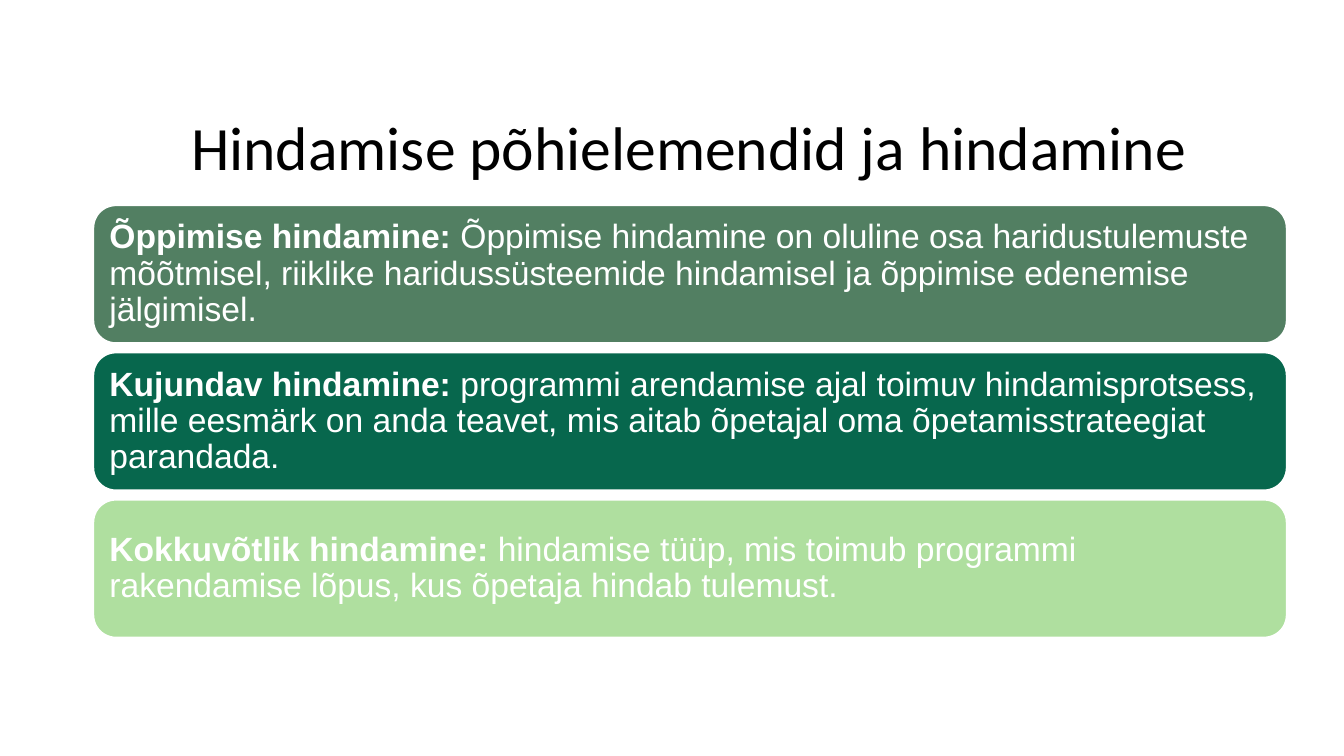
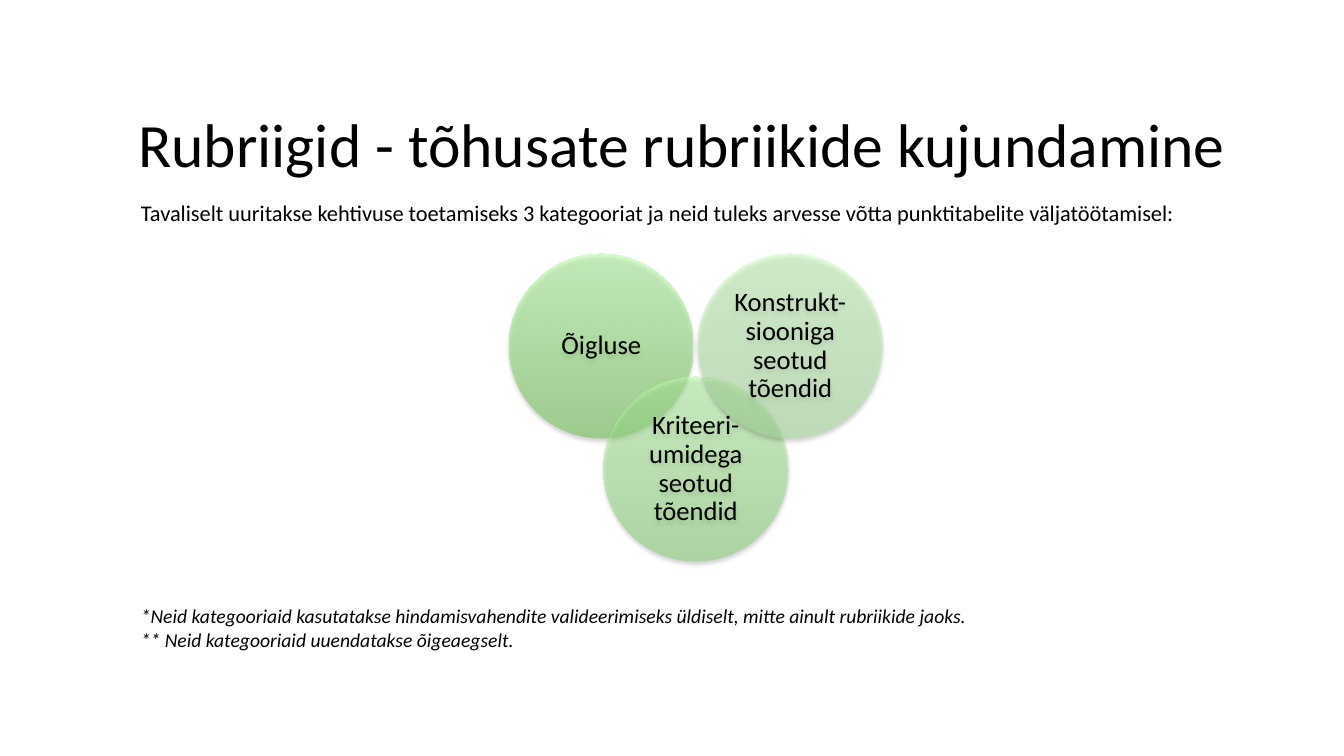
import dataclasses
import typing

import pptx
import pptx.dml.color
import pptx.enum.shapes
import pptx.enum.text
import pptx.oxml
import pptx.oxml.ns
import pptx.oxml.xmlchemy
import pptx.util

Cm = pptx.util.Cm
Shape = pptx.enum.shapes.MSO_SHAPE
Align = pptx.enum.text.PP_ALIGN
Anchor = pptx.enum.text.MSO_ANCHOR
qn = pptx.oxml.ns.qn

BLACK = "000000"
WHITE = "FFFFFF"


@dataclasses.dataclass(frozen=True)
class Style:
    size: float
    font: str = "Calibri"
    tint: str = BLACK
    align: Align = Align.LEFT
    anchor: Anchor = Anchor.TOP
    lead: float = 1.0
    side: float = 0.25
    top: float = 0.13
    slant: bool = False


@dataclasses.dataclass(frozen=True)
class Box:
    left: float
    top: float
    width: float
    height: float

    def place(self) -> tuple:
        return Cm(self.left), Cm(self.top), Cm(self.width), Cm(self.height)


class Panel(typing.NamedTuple):
    head: str
    body: str
    tint: str


class Disc(typing.NamedTuple):
    text: str
    step: int
    top: float
    base: str
    light: str


TITLE = Style(44, align=Align.CENTER, anchor=Anchor.MIDDLE, lead=0.9)
INTRO = Style(16)
NOTE = Style(14, slant=True)
CARD = Style(24, font="Arial", tint=WHITE, anchor=Anchor.MIDDLE, lead=0.9, top=0.25)
LABEL = Style(19, align=Align.CENTER, anchor=Anchor.MIDDLE, lead=0.9, side=0.2, top=0.2)

PANELS = [
    Panel("Õppimise hindamine: ",
          "Õppimise hindamine on oluline osa haridustulemuste mõõtmisel, riiklike "
          "haridussüsteemide hindamisel ja õppimise edenemise jälgimisel.", "527F62"),
    Panel("Kujundav hindamine: ",
          "programmi arendamise ajal toimuv hindamisprotsess, mille eesmärk on anda teavet, "
          "mis aitab õpetajal oma õpetamisstrateegiat parandada.", "07674D"),
    Panel("Kokkuvõtlik hindamine: ",
          "hindamise tüüp, mis toimub programmi rakendamise lõpus, kus õpetaja hindab "
          "tulemust.", "AFDF9F"),
]

DISCS = [
    Disc("Õigluse", 0, 6.4, "69C449", "B0FF9F"),
    Disc("Kriteeri-umidega seotud tõendid", 1, 9.5, "87D372", "BCFFAA"),
    Disc("Konstrukt-siooniga seotud tõendid", 2, 6.4, "ABE19E", "CBFFBD"),
]


def shade(code: str) -> pptx.dml.color.RGBColor:
    return pptx.dml.color.RGBColor.from_string(code)


def write(shape, text: str, style: Style, tail: str = "") -> None:
    frame = shape.text_frame
    frame.word_wrap = True
    frame.vertical_anchor = style.anchor
    frame.margin_left = frame.margin_right = Cm(style.side)
    frame.margin_top = frame.margin_bottom = Cm(style.top)
    line = frame.paragraphs[0]
    line.text = text
    line.alignment = style.align
    line.line_spacing = style.lead
    if tail:
        line.runs[0].font.bold = True
        line.add_run().text = tail
    for run in line.runs:
        run.font.size = pptx.util.Pt(style.size)
        run.font.name = style.font
        run.font.italic = style.slant
        run.font.color.rgb = shade(style.tint)


def add_text(slide, box: Box, text: str, style: Style) -> None:
    write(slide.shapes.add_textbox(*box.place()), text, style)


def add_panel(slide, box: Box, panel: Panel) -> None:
    shape = slide.shapes.add_shape(Shape.ROUNDED_RECTANGLE, *box.place())
    shape.shadow.inherit = False
    shape.fill.solid()
    shape.fill.fore_color.rgb = shade(panel.tint)
    shape.line.color.rgb = shade(WHITE)
    shape.line.width = pptx.util.Pt(2)
    write(shape, panel.head, CARD, panel.body)


def add_disc(slide, box: Box, disc: Disc) -> None:
    shape = slide.shapes.add_shape(Shape.OVAL, *box.place())
    shape.line.fill.background()
    shape.fill.gradient()
    shape.fill.gradient_angle = 90
    props = shape.element.spPr
    for stop, code, place in zip(shape.fill.gradient_stops, (disc.base, disc.light), (0, 1)):
        stop.color.rgb = shade(code)
        stop.position = place
    for node in props.iter(qn("a:srgbClr")):
        node.append(pptx.oxml.parse_xml(f'<a:alpha {pptx.oxml.ns.nsdecls("a")} val="50000"/>'))
    shape.shadow.inherit = False
    props.find(qn("a:effectLst")).append(pptx.oxml.parse_xml(
        f'<a:outerShdw {pptx.oxml.ns.nsdecls("a")} blurRad="39370" dist="22860" dir="5400000" '
        f'rotWithShape="0"><a:srgbClr val="{BLACK}"><a:alpha val="35000"/></a:srgbClr>'
        '</a:outerShdw>'))
    write(shape, disc.text, LABEL)


def add_slide(deck, left: float, top: float, title: str):
    slide = deck.slides.add_slide(deck.slide_layouts[6])
    add_text(slide, Box(left, top, 29.21, 3.43), title, TITLE)
    return slide


def main() -> None:
    deck = pptx.Presentation()
    deck.slide_width = Cm(33.87)
    deck.slide_height = Cm(19.05)

    slide = add_slide(deck, 2.77, 2.08, "Hindamise põhielemendid ja hindamine")
    for row, panel in enumerate(PANELS):
        add_panel(slide, Box(2.34, 5.16 + 3.71 * row, 30.1, 3.5), panel)

    slide = add_slide(deck, 2.59, 2.01, "Rubriigid - tõhusate rubriikide kujundamine")
    add_text(slide, Box(3.3, 4.9, 28.5, 0.94),
             "Tavaliselt uuritakse kehtivuse toetamiseks 3 kategooriat ja neid tuleks arvesse "
             "võtta punktitabelite väljatöötamisel:", INTRO)
    for disc in DISCS:
        add_disc(slide, Box(12.83 + 2.38 * disc.step, disc.top, 4.65, 4.65), disc)
    add_text(slide, Box(3.3, 15.09, 28.5, 1.45),
             "*Neid kategooriaid kasutatakse hindamisvahendite valideerimiseks üldiselt, mitte "
             "ainult rubriikide jaoks.\n** Neid kategooriaid uuendatakse õigeaegselt.", NOTE)

    deck.save("out.pptx")


if __name__ == "__main__":
    main()
